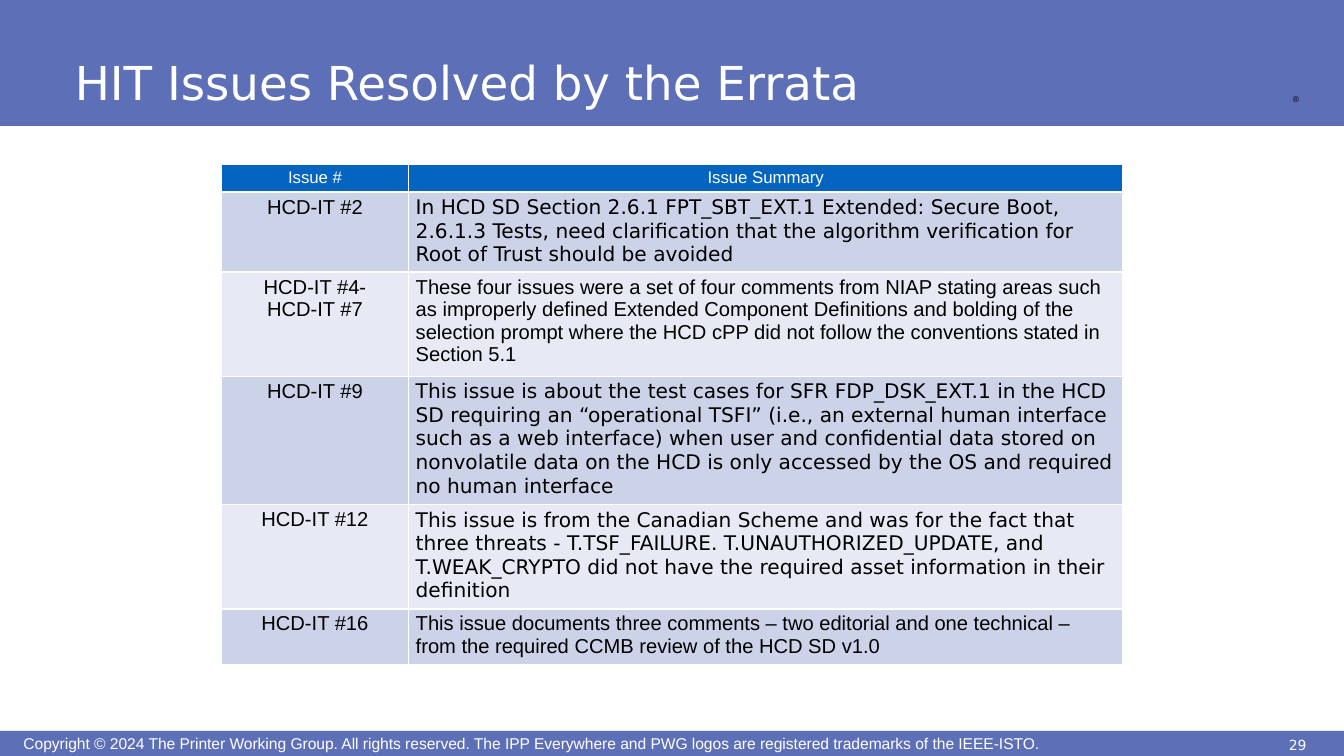
from lxml.etree import SubElement
from pptx import Presentation
from pptx.dml.color import RGBColor
from pptx.enum.shapes import MSO_SHAPE
from pptx.enum.text import MSO_ANCHOR, MSO_AUTO_SIZE, PP_ALIGN
from pptx.oxml.ns import qn
from pptx.util import Pt

WIDTH, HEIGHT = 800, 450
BAND = "5D6FB7"
WHITE = "FFFFFF"
BLACK = "000000"
HEADER_FILL = "0365C0"
ROW_FILLS = ["CCD3E8", "E7EAF4"]
ARIAL, DEJAVU = "Arial", "DejaVu Sans"

COLUMN_WIDTHS = [111, 425.5]
ROW_HEIGHTS = [16, 46.5, 60.5, 74.5, 60.5, 32.5]
HEADINGS = ["Issue #", "Issue Summary"]
ISSUES = [
    ("HCD-IT #2", DEJAVU,
     "In HCD SD Section 2.6.1 FPT_SBT_EXT.1 Extended: Secure Boot, 2.6.1.3 Tests, need "
     "clarification that the algorithm verification for Root of Trust should be avoided"),
    ("HCD-IT #4-\nHCD-IT #7", ARIAL,
     "These four issues were a set of four comments from NIAP stating areas such as improperly "
     "defined Extended Component Definitions and bolding of the selection prompt where the HCD "
     "cPP did not follow the conventions stated in Section 5.1"),
    ("HCD-IT #9", DEJAVU,
     "This issue is about the test cases for SFR FDP_DSK_EXT.1 in the HCD SD requiring an "
     "“operational TSFI” (i.e., an external human interface such as a web interface) when user "
     "and confidential data stored on nonvolatile data on the HCD is only accessed by the OS "
     "and required no human interface"),
    ("HCD-IT #12", DEJAVU,
     "This issue is from the Canadian Scheme and was for the fact that three threats - "
     "T.TSF_FAILURE. T.UNAUTHORIZED_UPDATE, and T.WEAK_CRYPTO did not have the required asset "
     "information in their definition"),
    ("HCD-IT #16", ARIAL,
     "This issue documents three comments – two editorial and one technical – from the required "
     "CCMB review of the HCD SD v1.0"),
]


def color(value):
    return RGBColor.from_string(value)


def apply(target, values):
    for name, value in values.items():
        setattr(target, name, value)


def margins(left, top, right, bottom):
    return {"margin_left": Pt(left), "margin_top": Pt(top),
            "margin_right": Pt(right), "margin_bottom": Pt(bottom)}


def write(frame, text, font, size, ink, align=PP_ALIGN.LEFT):
    frame.text = text
    for paragraph in frame.paragraphs:
        paragraph.alignment = align
        apply(paragraph.font, {"name": font, "size": Pt(size), "bold": False})
        paragraph.font.color.rgb = color(ink)


def add_band(slide, box):
    band = slide.shapes.add_shape(MSO_SHAPE.RECTANGLE, *map(Pt, box))
    band.shadow.inherit = False
    band.fill.solid()
    band.fill.fore_color.rgb = color(BAND)
    band.line.fill.background()


def add_label(slide, box, text, font, size, align=PP_ALIGN.LEFT, ink=WHITE, inset=0):
    frame = slide.shapes.add_textbox(*map(Pt, box)).text_frame
    apply(frame, {"word_wrap": True, "vertical_anchor": MSO_ANCHOR.MIDDLE,
                  **margins(inset, 0, 0, 0)})
    write(frame, text, font, size, ink, align)


def add_title_band(slide, box):
    left, top, width, height = box
    add_band(slide, box)
    title = slide.shapes.title
    slide.shapes._spTree.append(title._element)
    apply(title, {"left": Pt(left + 40), "top": Pt(top + 3),
                  "width": Pt(662), "height": Pt(height - 8)})
    apply(title.text_frame, {"word_wrap": True, "auto_size": MSO_AUTO_SIZE.NONE,
                             "vertical_anchor": MSO_ANCHOR.BOTTOM,
                             **margins(4.5, 4.5, 4.5, 4.5)})
    write(title.text_frame, "HIT Issues Resolved by the Errata", DEJAVU, 27.8, WHITE)
    add_label(slide, (left + width - 38, top + 53, 20, 12), "®", ARIAL, 5, ink=BLACK, inset=7.5)


def add_footer_band(slide, box):
    left, top, width, height = box
    add_band(slide, box)
    add_label(slide, (left + 11, top, 740, height),
              "Copyright © 2024 The Printer Working Group. All rights reserved. The IPP Everywhere "
              "and PWG logos are registered trademarks of the IEEE-ISTO.", ARIAL, 9.3, inset=3)
    add_label(slide, (left + width - 50, top + 1, 45, height), "29", DEJAVU, 8.3,
              PP_ALIGN.CENTER)


def fill_cell(cell, fill, text, font, size, ink, align):
    apply(cell, {"vertical_anchor": MSO_ANCHOR.TOP, **margins(4.5, 2.2, 4.5, 2.2)})
    write(cell.text_frame, text, font, size, ink, align)
    properties = cell._tc.get_or_add_tcPr()
    for side in ("a:lnL", "a:lnR", "a:lnT", "a:lnB"):
        border = SubElement(properties, qn(side), w=str(Pt(1)))
        SubElement(SubElement(border, qn("a:solidFill")), qn("a:srgbClr"), val=WHITE)
    cell.fill.solid()
    cell.fill.fore_color.rgb = color(fill)


def add_issue_table(slide, box):
    issues = slide.shapes.add_table(len(ISSUES) + 1, len(HEADINGS), *map(Pt, box)).table
    issues.horz_banding = False
    for column, width in zip(issues.columns, COLUMN_WIDTHS):
        column.width = Pt(width)
    for row, height in zip(issues.rows, ROW_HEIGHTS):
        row.height = Pt(height)
    for index, heading in enumerate(HEADINGS):
        fill_cell(issues.cell(0, index), HEADER_FILL, heading, ARIAL, 10, WHITE, PP_ALIGN.CENTER)
    for index, (number, summary_font, summary) in enumerate(ISSUES):
        fill = ROW_FILLS[index % 2]
        fill_cell(issues.cell(index + 1, 0), fill, number, ARIAL, 12, BLACK, PP_ALIGN.CENTER)
        fill_cell(issues.cell(index + 1, 1), fill, summary, summary_font, 12, BLACK,
                  PP_ALIGN.LEFT)


def main():
    deck = Presentation()
    apply(deck, {"slide_width": Pt(WIDTH), "slide_height": Pt(HEIGHT)})
    slide = deck.slides.add_slide(deck.slide_layouts.get_by_name("Title Only"))
    add_title_band(slide, (0, 0, WIDTH, 75))
    add_issue_table(slide, (132, 98, sum(COLUMN_WIDTHS), sum(ROW_HEIGHTS)))
    add_footer_band(slide, (0, 435, WIDTH, 15))
    deck.save("out.pptx")


if __name__ == "__main__":
    main()
